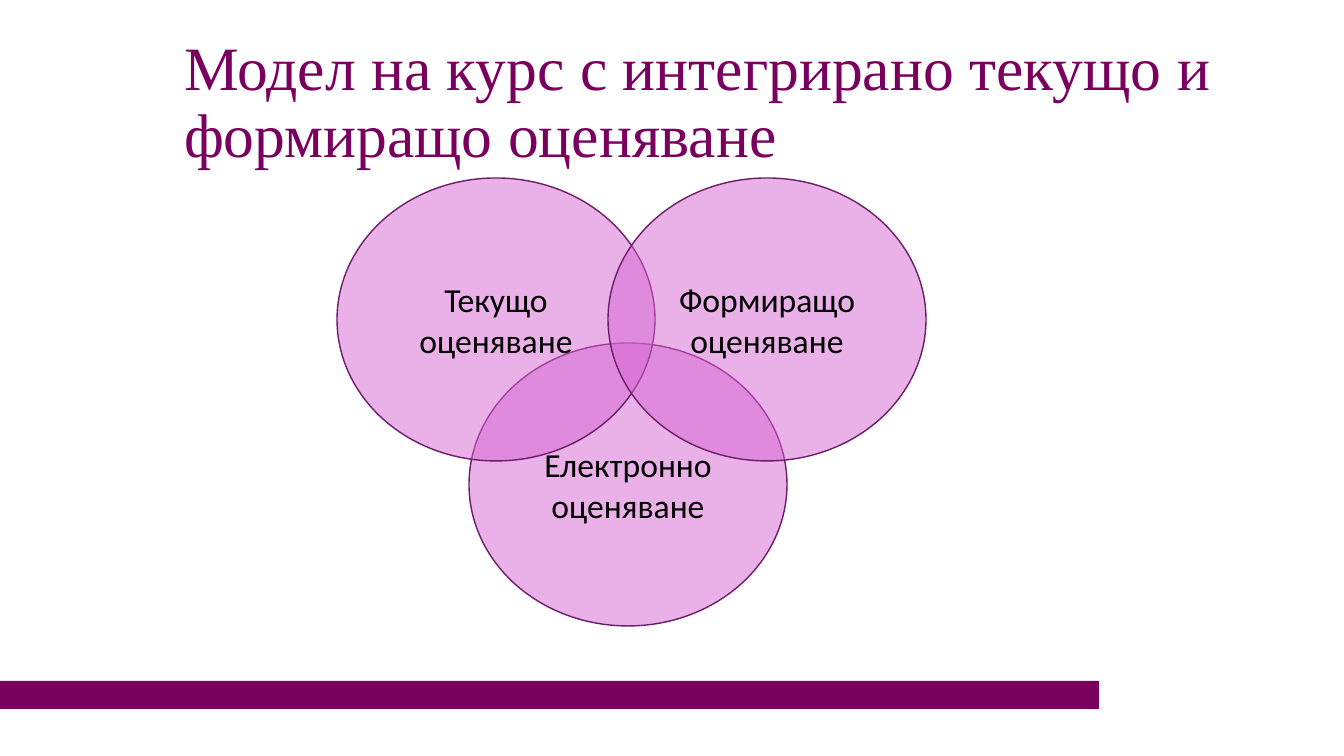
import pptx
import pptx.util
import pptx.dml.color
import pptx.enum.shapes
import pptx.enum.text
import pptx.oxml
import pptx.oxml.ns

SCALE = 9071.43  # EMU per px
SHAPE = pptx.enum.shapes.MSO_SHAPE
ALIGN = pptx.enum.text.PP_ALIGN
MIDDLE = pptx.enum.text.MSO_ANCHOR.MIDDLE


def px(count):
    return pptx.util.Emu(round(count * SCALE))


def color(code):
    return pptx.dml.color.RGBColor.from_string(code)


class Deck:
    plum = "7A005E"
    title_ink = "7A005F"
    pink = "D665D3"
    edge = "6C1D6A"
    ink = "000000"

    def __init__(self, width, height):
        self.prs = pptx.Presentation()
        self.prs.slide_width, self.prs.slide_height = px(width), px(height)
        self.slide = self.prs.slides.add_slide(self.prs.slide_layouts[5])

    def label(self, shape, text, size, font, ink, align):
        frame = shape.text_frame
        frame.word_wrap = True
        frame.auto_size = pptx.enum.text.MSO_AUTO_SIZE.NONE
        frame.vertical_anchor = MIDDLE
        frame.text = text
        para = frame.paragraphs[0]
        para.alignment = align
        para.font.size = pptx.util.Pt(size)
        para.font.name = font
        para.font.color.rgb = color(ink)
        return para

    def title(self, text, left, top, width, height):
        box = self.slide.shapes.title
        box.left, box.top = px(left), px(top)
        box.width, box.height = px(width), px(height)
        para = self.label(box, text, 44, "Times New Roman",
                          self.title_ink, ALIGN.LEFT)
        para.line_spacing = 0.9

    def shape(self, kind, fill, left, top, width, height):
        item = self.slide.shapes.add_shape(
            kind, px(left), px(top), px(width), px(height))
        item.shadow.inherit = False
        item.fill.solid()
        item.fill.fore_color.rgb = color(fill)
        return item

    def bar(self, left, top, width, height):
        item = self.shape(SHAPE.RECTANGLE, self.plum, left, top, width, height)
        item.line.fill.background()

    def circle(self, text, left, top, width, height):
        """Add a half-transparent labelled ellipse."""
        item = self.shape(SHAPE.OVAL, self.pink, left, top, width, height)
        tint = item.element.spPr.find(".//" + pptx.oxml.ns.qn("a:srgbClr"))
        tint.append(pptx.oxml.parse_xml(
            f'<a:alpha {pptx.oxml.ns.nsdecls("a")} val="50000"/>'))
        item.line.color.rgb = color(self.edge)
        item.line.width = pptx.util.Pt(1)
        self.label(item, text, 24, "Calibri", self.ink, ALIGN.CENTER)


def main():
    deck = Deck(1344, 756)
    deck.bar(0, 681, 1099, 28)
    deck.title("Модел на курс с интегрирано текущо и формиращо оценяване",
               174, 31, 1077, 146)
    for kind, left, top in (("Електронно", 469, 343),
                            ("Текущо", 337, 178),
                            ("Формиращо", 608, 178)):
        deck.circle(f"{kind} оценяване", left, top, 318, 283)
    deck.prs.save("out.pptx")


if __name__ == "__main__":
    main()
